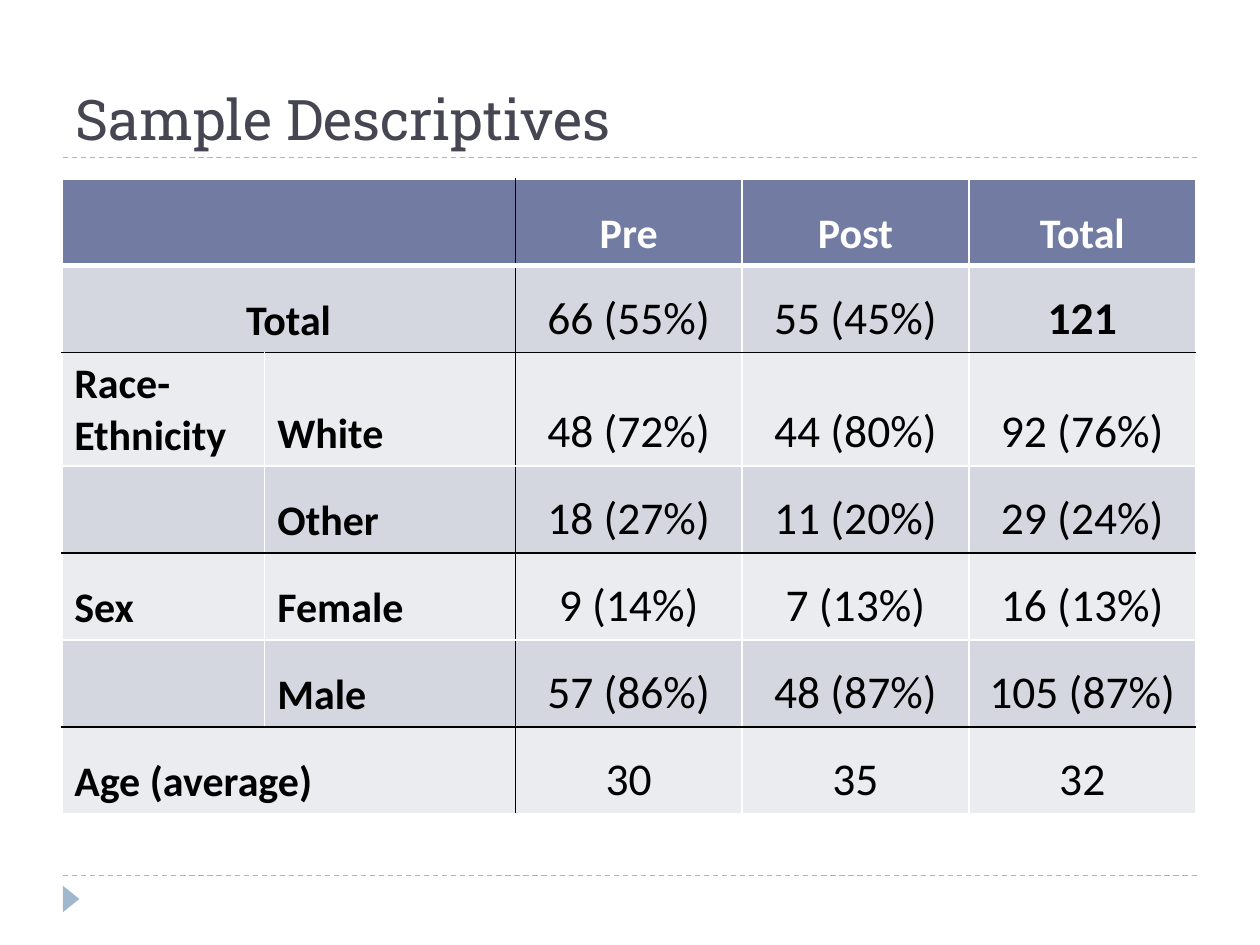
from dataclasses import dataclass

from lxml.etree import SubElement
from pptx import Presentation
from pptx.dml.color import RGBColor as RGB
from pptx.enum.dml import MSO_LINE
from pptx.enum.shapes import MSO_CONNECTOR as CONN, MSO_SHAPE as SHAPE
from pptx.enum.text import MSO_ANCHOR as ANCHOR, PP_ALIGN as ALIGN
from pptx.oxml.ns import qn
from pptx.util import Pt

COLORS = {
    "title": "464653",
    "accent": "9FB8CD",
    "header": "727CA3",
    "band_dark": "D5D7E0",
    "band_light": "EBECF0",
    "black": "000000",
    "white": "FFFFFF",
}
LEFT, RIGHT = 36, 684
RULE_YS = (500.4, 90)
TABLE_LEFT, TABLE_TOP = 35.3, 102.2
COL_WIDTHS = (116, 143.2, 129.6, 129.6, 129.6)
ROW_HEIGHT, TALL_ROW_HEIGHT = 49.7, 62.9
LABEL_COLS = 2


@dataclass
class Row:
    labels: tuple[str, ...]  # one label spans both label columns
    values: tuple[str, str, str]
    ends_group: bool = False
    centered: bool = False
    bold_total: bool = False
    height: float = ROW_HEIGHT


ROWS = [
    Row(("",), ("Pre", "Post", "Total")),
    Row(("Total",), ("66 (55%)", "55 (45%)", "121"),
        ends_group=True, centered=True, bold_total=True),
    Row(("Race-Ethnicity", "White"), ("48 (72%)", "44 (80%)", "92 (76%)"),
        height=TALL_ROW_HEIGHT),
    Row(("", "Other"), ("18 (27%)", "11 (20%)", "29 (24%)"), ends_group=True),
    Row(("Sex", "Female"), ("9 (14%)", "7 (13%)", "16 (13%)")),
    Row(("", "Male"), ("57 (86%)", "48 (87%)", "105 (87%)"), ends_group=True),
    Row(("Age (average)",), ("30", "35", "32")),
]


def color(name: str) -> RGB:
    return RGB.from_string(COLORS[name])


def write(tf, text: str, *, size: float, fill: str = "black", font: str = "Calibri",
          bold: bool = False, align=ALIGN.LEFT) -> None:
    p = tf.paragraphs[0]
    p.alignment = align
    r = p.add_run()
    r.text = text
    r.font.name, r.font.size, r.font.bold = font, Pt(size), bold
    r.font.color.rgb = color(fill)


def add_title(slide, text: str) -> None:
    sp = slide.shapes.add_textbox(Pt(LEFT), Pt(12.2), Pt(RIGHT - LEFT), Pt(77.8))
    tf = sp.text_frame
    tf.word_wrap = True
    tf.vertical_anchor = ANCHOR.BOTTOM
    write(tf, text, size=32, fill="title", font="Roboto Slab")


def add_rule(slide, y: float) -> None:
    rule = slide.shapes.add_connector(CONN.STRAIGHT, Pt(LEFT), Pt(y), Pt(RIGHT), Pt(y))
    rule.line.color.rgb = color("accent")
    rule.line.width = Pt(0.75)
    rule.line.dash_style = MSO_LINE.DASH
    SubElement(rule.element.spPr, qn("a:effectLst"))


def add_marker(slide) -> None:
    sp = slide.shapes.add_shape(SHAPE.ISOSCELES_TRIANGLE,
                                Pt(33.1), Pt(509), Pt(15.1), Pt(9.4))
    sp.rotation = 90
    sp.shadow.inherit = False
    sp.fill.solid()
    sp.fill.fore_color.rgb = color("accent")
    sp.line.fill.background()


def add_border(cell, side: str, name: str, width: float = 1) -> None:
    ln = SubElement(cell._tc.get_or_add_tcPr(), qn(f"a:ln{side}"), w=str(Pt(width)))
    fill = SubElement(ln, qn("a:solidFill"))
    SubElement(fill, qn("a:srgbClr"), val=COLORS[name])


def style_cell(cell, row: int, col: int) -> None:
    """Frame the cell in white, with black at group ends and beside the labels."""
    def black_if(condition: bool) -> str:
        return "black" if condition else "white"

    add_border(cell, "L", black_if(col == LABEL_COLS))
    add_border(cell, "R", black_if(col == LABEL_COLS - 1))
    add_border(cell, "T", black_if(row > 0 and ROWS[row - 1].ends_group),
               3 if row == 1 else 1)
    add_border(cell, "B", black_if(ROWS[row].ends_group), 3 if row == 0 else 1)
    band = "header" if row == 0 else "band_dark" if row % 2 else "band_light"
    cell.fill.solid()
    cell.fill.fore_color.rgb = color(band)
    cell.vertical_anchor = ANCHOR.BOTTOM


def fill_row(table, i: int, row: Row) -> None:
    table.rows[i].height = Pt(row.height)
    for col in range(len(COL_WIDTHS)):
        style_cell(table.cell(i, col), i, col)
    if len(row.labels) == 1:
        first, last = table.cell(i, 0), table.cell(i, LABEL_COLS - 1)
        first.merge(last)
        # The merged cell shows its own right edge, so it takes the black divider.
        edge = first._tc.tcPr.find(qn("a:lnR"))
        edge.find(".//" + qn("a:srgbClr")).set("val", COLORS["black"])
    for col, text in enumerate(row.labels):
        if text:
            write(table.cell(i, col).text_frame, text, size=24, bold=True,
                  align=ALIGN.CENTER if row.centered else ALIGN.LEFT)
    header = i == 0
    for col, text in enumerate(row.values, LABEL_COLS):
        is_total = col == len(COL_WIDTHS) - 1
        write(table.cell(i, col).text_frame, text, size=24 if header else 26,
              fill="white" if header else "black", align=ALIGN.CENTER,
              bold=header or (row.bold_total and is_total))


def add_descriptives(slide) -> None:
    frame = slide.shapes.add_table(
        len(ROWS), len(COL_WIDTHS), Pt(TABLE_LEFT), Pt(TABLE_TOP),
        Pt(sum(COL_WIDTHS)), Pt(sum(row.height for row in ROWS)))
    table = frame.table
    for column, width in zip(table.columns, COL_WIDTHS):
        column.width = Pt(width)
    for i, row in enumerate(ROWS):
        fill_row(table, i, row)


def main() -> None:
    prs = Presentation()
    prs.slide_width, prs.slide_height = Pt(720), Pt(540)
    slide = prs.slides.add_slide(prs.slide_layouts[6])
    for y in RULE_YS:
        add_rule(slide, y)
    add_marker(slide)
    add_title(slide, "Sample Descriptives")
    add_descriptives(slide)
    prs.save("out.pptx")


if __name__ == "__main__":
    main()
